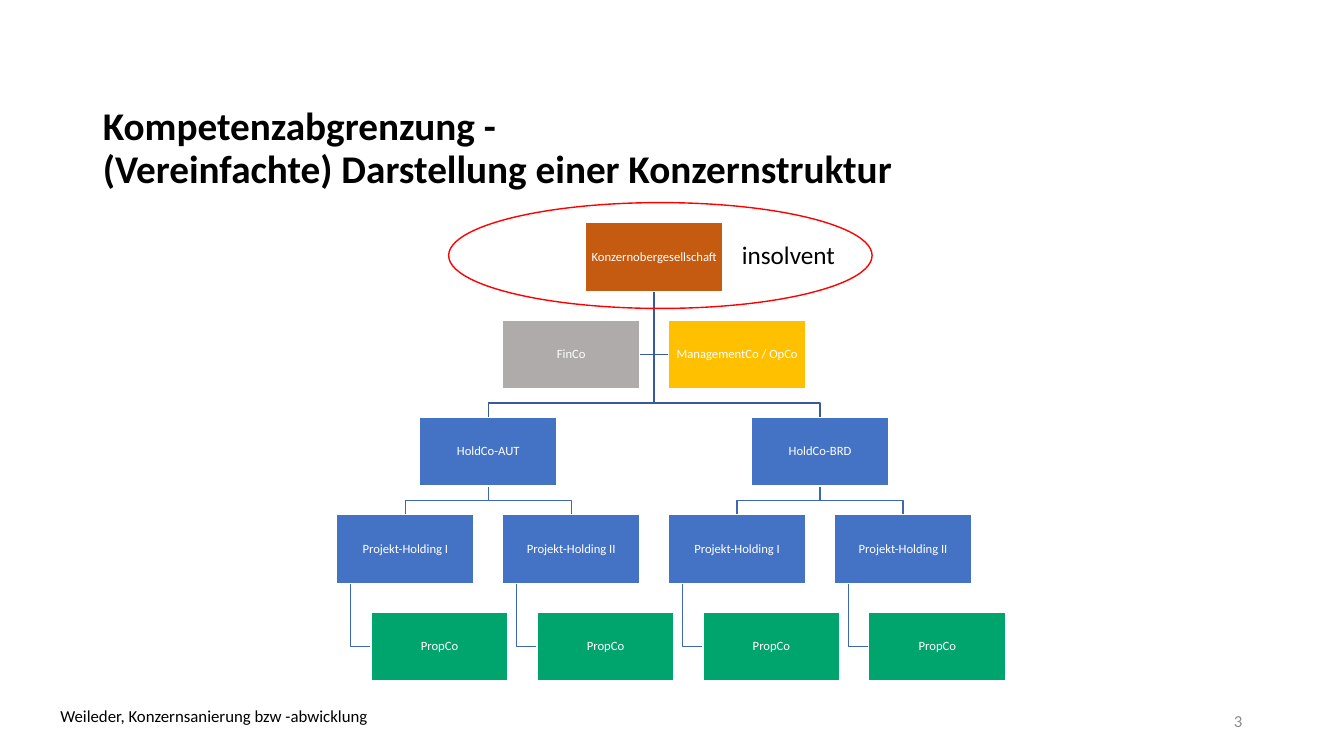
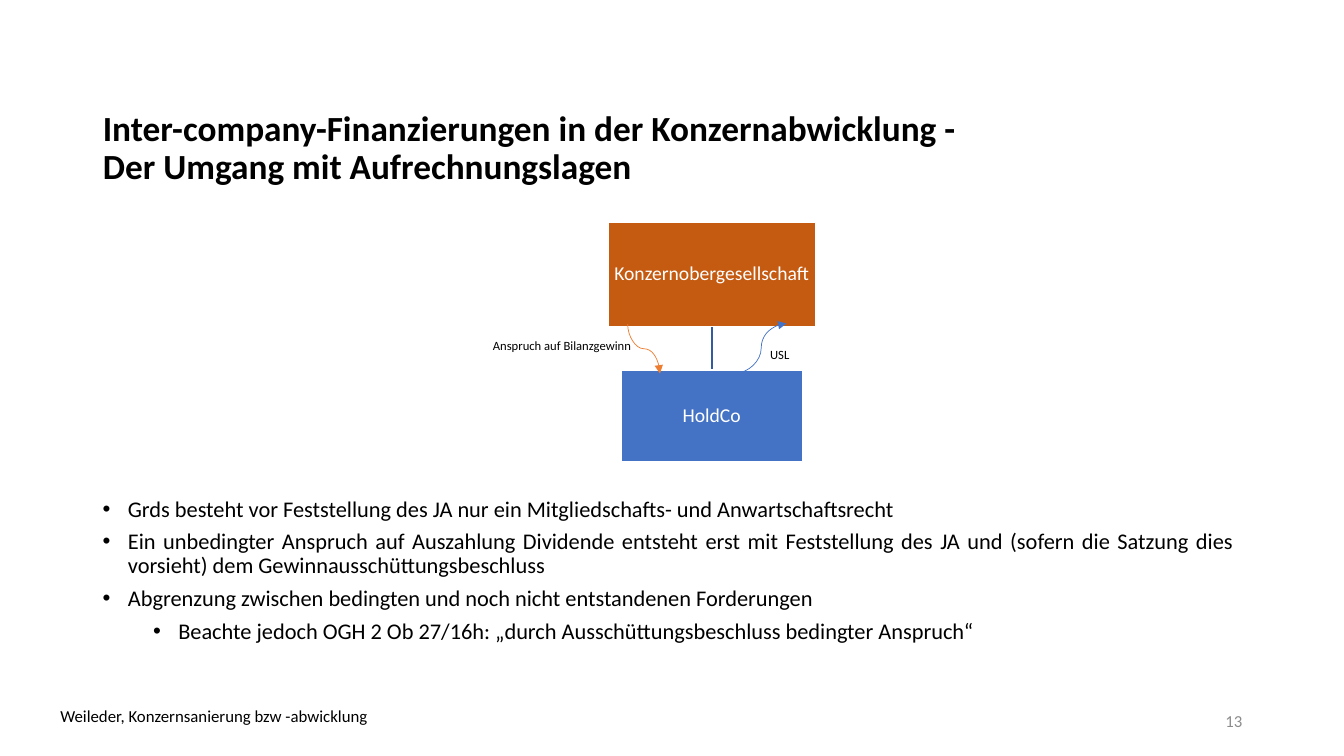
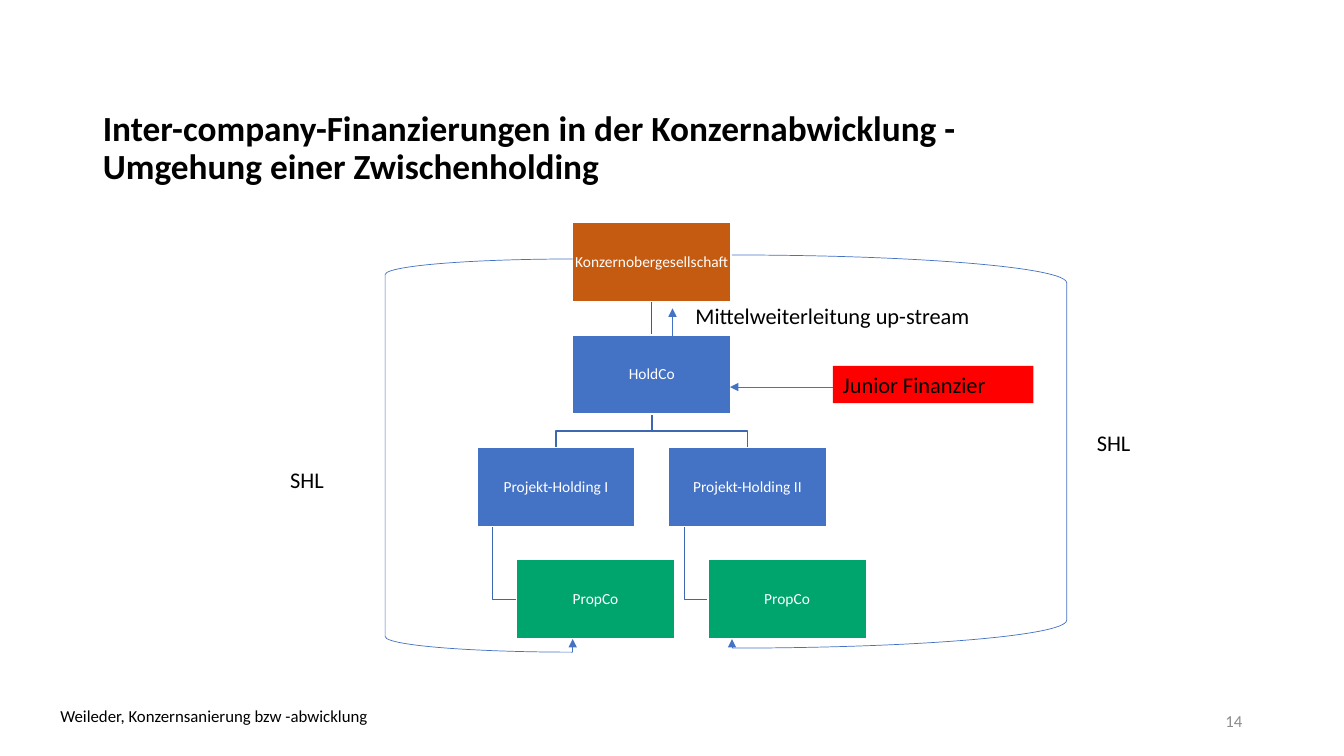
from dataclasses import dataclass

import lxml.etree
import pptx
import pptx.dml.color
import pptx.enum.shapes
import pptx.enum.text
import pptx.oxml.ns
import pptx.shapes.autoshape
import pptx.shapes.connector
import pptx.slide
import pptx.util

Inches = pptx.util.Inches
Pt = pptx.util.Pt
RGBColor = pptx.dml.color.RGBColor
SHAPE = pptx.enum.shapes.MSO_SHAPE
CONNECTOR = pptx.enum.shapes.MSO_CONNECTOR
ALIGN = pptx.enum.text.PP_ALIGN
ANCHOR = pptx.enum.text.MSO_ANCHOR
qn = pptx.oxml.ns.qn

FONT = "Calibri"
FOOTER = "Weileder, Konzernsanierung bzw -abwicklung"

BLACK = RGBColor(0x00, 0x00, 0x00)
WHITE = RGBColor(0xFF, 0xFF, 0xFF)
GREY = RGBColor(0x8C, 0x8C, 0x8C)
SILVER = RGBColor(0xAF, 0xAB, 0xAB)
BLUE = RGBColor(0x44, 0x72, 0xC4)
ROOT_LINK = RGBColor(0x36, 0x5B, 0x9D)
CHILD_LINK = RGBColor(0x3E, 0x67, 0xB2)
RUST = RGBColor(0xC5, 0x5A, 0x11)
ORANGE = RGBColor(0xED, 0x7D, 0x31)
GOLD = RGBColor(0xFF, 0xC0, 0x00)
GREEN = RGBColor(0x00, 0xA5, 0x6D)
RED = RGBColor(0xFF, 0x00, 0x00)

Point = tuple[float, float]
Rect = tuple[float, float, float, float]


@dataclass(frozen=True)
class Node:
    """A company in a chart; link is how it joins its parent: down, side or hang."""
    text: str
    col: float
    row: int
    fill: RGBColor
    parent: int | None = None
    link: str = "down"


@dataclass(frozen=True)
class Tree:
    """Geometry of a chart: every gap follows from the box width."""
    left: float
    top: float
    box_w: float
    size: float

    @property
    def box_h(self) -> float:
        return self.box_w / 2

    @property
    def gap(self) -> float:
        return self.box_w * 0.21

    def corner(self, node: Node) -> Point:
        shift = self.box_w / 4 if node.link == "hang" else 0
        return (self.left + node.col * (self.box_w + self.gap) + shift,
                self.top + node.row * (self.box_h + self.gap))


@dataclass(frozen=True)
class Label:
    text: str
    at: Rect
    size: float


# Shared drawing helpers

def style(p, size: float, color: RGBColor = BLACK, bold: bool = False) -> None:
    p.font.name = FONT
    p.font.size = Pt(size)
    p.font.bold = bold
    p.font.color.rgb = color


def add_text(s: pptx.slide.Slide, label: Label, color: RGBColor = BLACK,
             align: ALIGN = ALIGN.LEFT, anchor: ANCHOR = ANCHOR.TOP,
             wrap: bool = False) -> pptx.shapes.autoshape.Shape:
    sp = s.shapes.add_textbox(*map(Inches, label.at))
    tf = sp.text_frame
    tf.word_wrap = wrap
    tf.vertical_anchor = anchor
    p = tf.paragraphs[0]
    p.text = label.text
    p.alignment = align
    style(p, label.size, color)
    return sp


def add_outline(s: pptx.slide.Slide, kind: SHAPE, at: Rect, color: RGBColor,
                width: float) -> None:
    sp = s.shapes.add_shape(kind, *map(Inches, at))
    sp.shadow.inherit = False
    sp.fill.background()
    sp.line.color.rgb = color
    sp.line.width = Pt(width)


def add_box(s: pptx.slide.Slide, label: Label, fill: RGBColor) -> None:
    sp = s.shapes.add_shape(SHAPE.RECTANGLE, *map(Inches, label.at))
    sp.shadow.inherit = False
    sp.fill.solid()
    sp.fill.fore_color.rgb = fill
    sp.line.color.rgb = WHITE
    sp.line.width = Pt(1)
    tf = sp.text_frame
    tf.word_wrap = False
    tf.vertical_anchor = ANCHOR.MIDDLE
    tf.margin_left = tf.margin_right = tf.margin_top = tf.margin_bottom = Inches(0.01)
    p = tf.paragraphs[0]
    p.text = label.text
    p.alignment = ALIGN.CENTER
    p.line_spacing = 0.9
    style(p, label.size, WHITE)


def add_line(s: pptx.slide.Slide, start: Point, end: Point, color: RGBColor = BLUE,
             width: float = 0.5, kind: CONNECTOR = CONNECTOR.STRAIGHT,
             arrow: bool = True) -> pptx.shapes.connector.Connector:
    cn = s.shapes.add_connector(kind, *map(Inches, start + end))
    cn.line.color.rgb = color
    cn.line.width = Pt(width)
    sp_pr = cn._element.spPr
    if arrow:
        lxml.etree.SubElement(sp_pr.find(qn("a:ln")), qn("a:tailEnd"), type="triangle")
    lxml.etree.SubElement(sp_pr, qn("a:effectLst"))
    return cn


def add_polyline(s: pptx.slide.Slide, points: list[Point], color: RGBColor) -> None:
    start, *rest = [(Inches(x), Inches(y)) for x, y in points]
    builder = s.shapes.build_freeform(*start)
    builder.add_line_segments(rest, close=False)
    sp = builder.convert_to_shape()
    sp.shadow.inherit = False
    sp.fill.background()
    sp.line.color.rgb = color
    sp.line.width = Pt(1)


def add_link(s: pptx.slide.Slide, tree: Tree, parent: Node, child: Node) -> None:
    w, h = tree.box_w, tree.box_h
    (px, py), (cx, cy) = tree.corner(parent), tree.corner(child)
    color = ROOT_LINK if parent.parent is None else CHILD_LINK
    bottom, middle = py + h, cy + h / 2
    x, child_x = px + w / 2, cx + w / 2
    if child.link == "hang":
        x = px + w / 10
        points = [(x, bottom), (x, middle), (cx, middle)]
    elif child.link == "side":
        edge = cx if cx > px else cx + w
        points = [(x, bottom), (x, middle), (edge, middle)]
    elif child.col == parent.col:
        add_line(s, (x, bottom), (x, cy), color, 1, arrow=False)
        return
    else:
        bend = cy - tree.gap / 2
        points = [(x, bottom), (x, bend), (child_x, bend), (child_x, cy)]
    add_polyline(s, points, color)


def add_tree(s: pptx.slide.Slide, tree: Tree, nodes: list[Node]) -> None:
    for node in nodes:
        if node.parent is not None:
            add_link(s, tree, nodes[node.parent], node)
    for node in nodes:
        at = (*tree.corner(node), tree.box_w, tree.box_h)
        add_box(s, Label(node.text, at, tree.size), node.fill)


def add_bullets(s: pptx.slide.Slide, at: Rect, items: list[tuple[int, str]]) -> None:
    tf = s.shapes.add_textbox(*map(Inches, at)).text_frame
    tf.word_wrap = True
    for i, (level, text) in enumerate(items):
        p = tf.add_paragraph() if i else tf.paragraphs[0]
        p.text = text
        p.level = level
        p.alignment = ALIGN.JUSTIFY
        p.line_spacing = 0.9
        p.space_before = Pt(6 if i else 0)
        p_pr = p._p.get_or_add_pPr()
        p_pr.set("marL", str(Inches(0.25 + 0.5 * level)))
        p_pr.set("indent", str(-Inches(0.25)))
        lxml.etree.SubElement(p_pr, qn("a:buFont"), typeface="Arial")
        lxml.etree.SubElement(p_pr, qn("a:buChar"), char="•")
        style(p, 16)


def add_page(prs, title: str, size: float, number: int) -> pptx.slide.Slide:
    """Add a slide with the common title, page number and footer."""
    s = prs.slides.add_slide(prs.slide_layouts[5])
    sp = s.shapes.title
    sp.left, sp.top, sp.width, sp.height = map(Inches, (0.92, 1.03, 11.57, 0.9))
    tf = sp.text_frame
    tf.auto_size = pptx.enum.text.MSO_AUTO_SIZE.NONE
    tf.vertical_anchor = ANCHOR.MIDDLE
    p = tf.paragraphs[0]
    p.text = title
    p.alignment = ALIGN.LEFT
    p.line_spacing = 0.9
    style(p, size, bold=True)
    add_text(s, Label(str(number), (9.42, 6.95, 3, 0.4), 12), GREY,
             ALIGN.RIGHT, ANCHOR.MIDDLE, wrap=True)
    add_text(s, Label(FOOTER, (0.5, 6.95, 6.86, 0.3), 12), wrap=True)
    return s


# Slides

def group_structure(prs) -> None:
    s = add_page(prs, "Kompetenzabgrenzung - \v(Vereinfachte) Darstellung einer Konzernstruktur",
                 28, 3)
    nodes = [
        Node("Konzernobergesellschaft", 1.5, 0, RUST),
        Node("FinCo", 1, 1, SILVER, 0, "side"),
        Node("ManagementCo / OpCo", 2, 1, GOLD, 0, "side"),
    ]
    for first_col, country in ((0, "AUT"), (2, "BRD")):
        holding = len(nodes)
        nodes.append(Node(f"HoldCo-{country}", first_col + 0.5, 2, BLUE, 0))
        for col, numeral in enumerate(("I", "II"), first_col):
            nodes.append(Node(f"Projekt-Holding {numeral}", col, 3, BLUE, holding))
            nodes.append(Node("PropCo", col, 4, GREEN, len(nodes) - 1, "hang"))
    add_tree(s, Tree(3.34, 2.21, 1.36, 9), nodes)
    add_outline(s, SHAPE.OVAL, (4.45, 2.01, 4.2, 1.05), RED, 1)
    add_text(s, Label("insolvent", (7.26, 2.33, 1.14, 0.4), 18))


def set_off(prs) -> None:
    s = add_page(prs, "Inter-company-Finanzierungen in der Konzernabwicklung -\v"
                 "Der Umgang mit Aufrechnungslagen", 25.2, 13)
    add_bullets(s, (0.92, 4.89, 11.42, 1.87), [
        (0, "Grds besteht vor Feststellung des JA nur ein Mitgliedschafts- und "
            "Anwartschaftsrecht"),
        (0, "Ein unbedingter Anspruch auf Auszahlung Dividende entsteht erst mit Feststellung "
            "des JA und (sofern die Satzung dies vorsieht) dem Gewinnausschüttungsbeschluss"),
        (0, "Abgrenzung zwischen bedingten und noch nicht entstandenen Forderungen"),
        (1, "Beachte jedoch OGH 2 Ob 27/16h: „durch Ausschüttungsbeschluss bedingter Anspruch“"),
    ])
    # Parent and holding
    add_line(s, (7.06, 3.24), (7.06, 3.67), ROOT_LINK, 1, arrow=False)
    add_box(s, Label("Konzernobergesellschaft", (6.03, 2.21, 2.06, 1.03), 14), RUST)
    add_box(s, Label("HoldCo", (6.16, 3.67, 1.8, 0.91), 14), BLUE)
    # Mutual claims; the downward curve is a horizontal one turned by 270 degrees
    add_line(s, (7.3, 3.7), (7.8, 3.21), kind=CONNECTOR.CURVE)
    down = add_line(s, (6.63, 3.3), (6.14, 3.62), ORANGE, kind=CONNECTOR.CURVE)
    down._element.spPr.find(qn("a:xfrm")).set("rot", str(270 * 60000))
    add_text(s, Label("USL", (7.54, 3.39, 0.39, 0.25), 9))
    add_text(s, Label("Anspruch auf Bilanzgewinn", (4.79, 3.3, 1.59, 0.25), 9))


def bypass(prs) -> None:
    s = add_page(prs, "Inter-company-Finanzierungen in der Konzernabwicklung -\v"
                 "Umgehung einer Zwischenholding", 25.2, 14)
    nodes = [
        Node("Konzernobergesellschaft", 0.5, 0, RUST),
        Node("HoldCo", 0.5, 1, BLUE, 0),
        Node("Projekt-Holding I", 0, 2, BLUE, 1),
        Node("PropCo", 0, 3, GREEN, 2, "hang"),
        Node("Projekt-Holding II", 1, 2, BLUE, 1),
        Node("PropCo", 1, 3, GREEN, 4, "hang"),
    ]
    add_tree(s, Tree(4.73, 2.21, 1.57, 11), nodes)
    # Junior lender and upstream flow
    lender = add_text(s, Label("Junior Finanzier", (8.26, 3.63, 1.99, 0.37), 16), wrap=True)
    lender.fill.solid()
    lender.fill.fore_color.rgb = RED
    add_line(s, (8.26, 3.84), (7.24, 3.84))
    add_line(s, (6.67, 3.41), (6.67, 3.06))
    add_text(s, Label("Mittelweiterleitung up-stream", (6.8, 2.95, 2.96, 0.37), 16))
    # Shareholder loans around the holding
    add_outline(s, SHAPE.LEFT_BRACKET, (3.82, 2.57, 1.86, 3.9), BLUE, 0.5)
    add_outline(s, SHAPE.RIGHT_BRACKET, (7.26, 2.53, 3.32, 3.9), BLUE, 0.5)
    for x, y in ((5.68, 6.47), (7.26, 6.43)):
        add_line(s, (x, y), (x, 6.34))
    for x, y in ((2.78, 4.58), (10.78, 4.21)):
        add_text(s, Label("SHL", (x, y, 0.54, 0.37), 16))


def main() -> None:
    prs = pptx.Presentation()
    prs.slide_width, prs.slide_height = Inches(13.33), Inches(7.5)
    group_structure(prs)
    set_off(prs)
    bypass(prs)
    prs.save("out.pptx")


if __name__ == "__main__":
    main()
